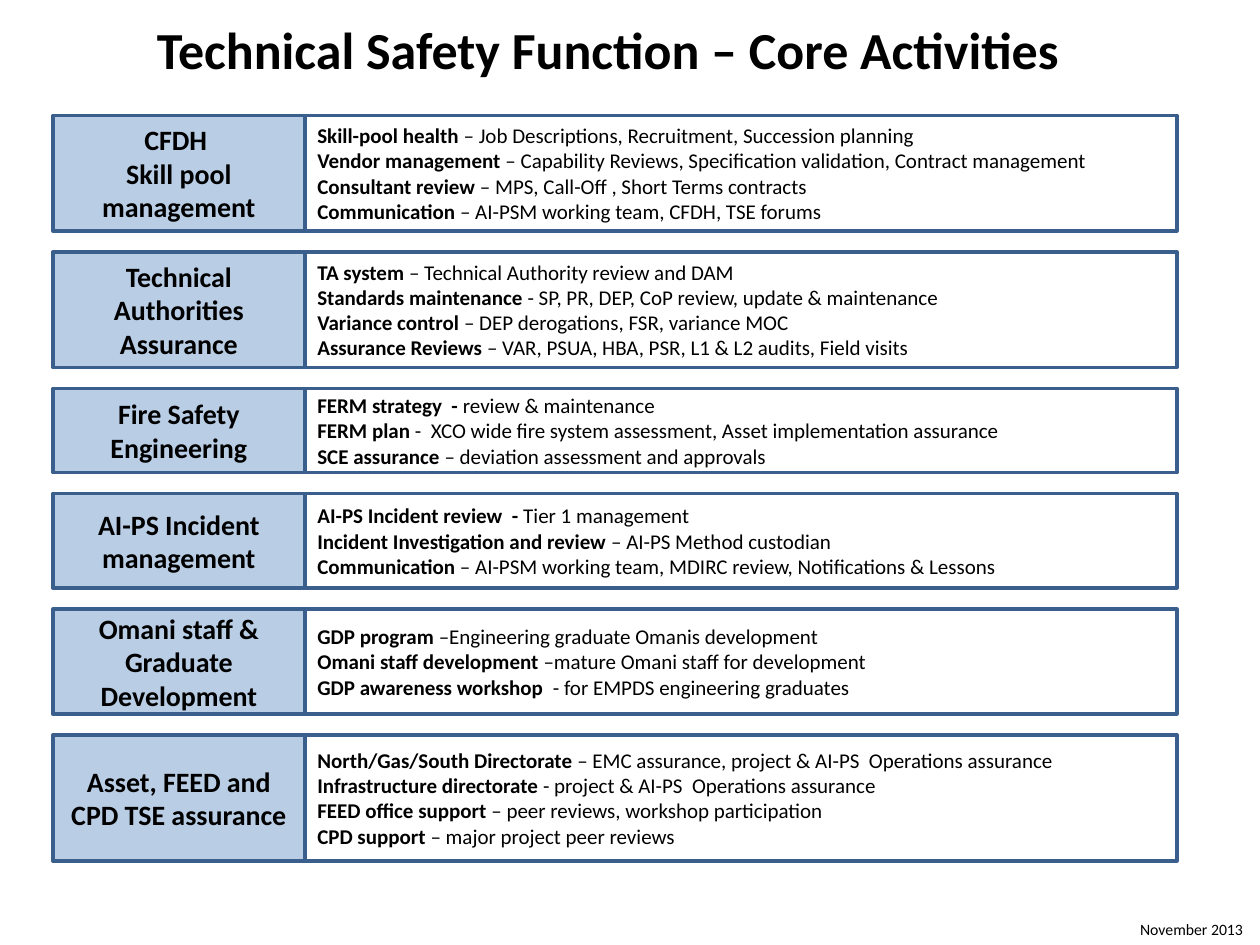
import pptx
import pptx.dml.color
import pptx.enum.shapes
import pptx.enum.text
import pptx.util

Inches = pptx.util.Inches
ALIGN = pptx.enum.text.PP_ALIGN
ANCHOR = pptx.enum.text.MSO_ANCHOR
AUTO_SIZE = pptx.enum.text.MSO_AUTO_SIZE

UNIT = Inches(1) / 12
GAP = 2
LEFT = Inches(0.42)
LABEL_WIDTH = Inches(2)
DETAIL_WIDTH = Inches(6.92)

ACTIVITIES = [
    (11, ["CFDH ", "Skill pool management"], [
        ("Skill-pool health ", "– Job Descriptions, Recruitment, Succession planning"),
        ("Vendor management ", "– Capability Reviews, Specification validation, Contract management"),
        ("Consultant review ", "– MPS, Call-Off , Short Terms contracts"),
        ("Communication ", "– AI-PSM working team, CFDH, TSE forums"),
    ]),
    (11, ["Technical Authorities", "Assurance"], [
        ("TA system ", "– Technical Authority review and DAM"),
        ("Standards maintenance ", "- SP, PR, DEP, CoP review, update & maintenance"),
        ("Variance control ", "– DEP derogations, FSR, variance MOC"),
        ("Assurance Reviews ", "– VAR, PSUA, HBA, PSR, L1 & L2 audits, Field visits"),
    ]),
    (8, ["Fire Safety Engineering"], [
        ("FERM strategy  - ", "review & maintenance"),
        ("FERM plan ", "-  XCO wide fire system assessment, Asset implementation assurance"),
        ("SCE assurance ", "– deviation assessment and approvals"),
    ]),
    (9, ["AI-PS Incident management"], [
        ("AI-PS Incident review  - ", "Tier 1 management"),
        ("Incident Investigation and review ", "– AI-PS Method custodian"),
        ("Communication", " – AI-PSM working team, MDIRC review, Notifications & Lessons"),
    ]),
    (10, ["Omani staff & Graduate Development"], [
        ("GDP program ", "–Engineering graduate Omanis development"),
        ("Omani staff development ", "–mature Omani staff for development"),
        ("GDP awareness workshop  ", "- for EMPDS engineering graduates"),
    ]),
    (12, ["Asset, FEED and CPD TSE assurance"], [
        ("North/Gas/South Directorate ", "– EMC assurance, project & AI-PS  Operations assurance"),
        ("Infrastructure directorate ", "- project & AI-PS  Operations assurance"),
        ("FEED office support ", "– peer reviews, workshop participation"),
        ("CPD support ", "– major project peer reviews"),
    ]),
]


def color(value):
    """Turn a hex string into a colour."""
    return pptx.dml.color.RGBColor.from_string(value)


def write_text(shape, lines, size, align=ALIGN.LEFT, anchor=ANCHOR.MIDDLE,
               wrap=True, auto_size=AUTO_SIZE.NONE, line_spacing=None):
    """Write one paragraph per line, each line a list of (text, bold) runs."""
    frame = shape.text_frame
    frame.word_wrap = wrap
    frame.auto_size = auto_size
    frame.vertical_anchor = anchor
    for index, line in enumerate(lines):
        paragraph = frame.add_paragraph() if index else frame.paragraphs[0]
        paragraph.alignment = align
        paragraph.line_spacing = line_spacing
        for text, bold in line:
            run = paragraph.add_run()
            run.text = text
            run.font.name = "Calibri"
            run.font.size = pptx.util.Pt(size)
            run.font.bold = bold
            run.font.color.rgb = color("000000")


def add_title(slide, text):
    """Place and fill the title."""
    title = slide.shapes.title
    title.left, title.top = Inches(0.33), Inches(0.17)
    title.width, title.height = Inches(9), Inches(0.53)
    write_text(title, [[(text, True)]], 29.7, align=ALIGN.CENTER, line_spacing=0.8)


def add_box(slide, left, top, width, height, fill):
    """Add a bordered rectangle."""
    box = slide.shapes.add_shape(pptx.enum.shapes.MSO_SHAPE.RECTANGLE,
                                 left, top, width, height)
    box.shadow.inherit = False
    box.fill.solid()
    box.fill.fore_color.rgb = color(fill)
    box.line.color.rgb = color("3A5F8C")
    box.line.width = pptx.util.Pt(2)
    return box


def add_activity(slide, top, height, labels, details):
    """Add a label box and the detail box beside it."""
    label_box = add_box(slide, LEFT, top, LABEL_WIDTH, height, "B9CDE5")
    write_text(label_box, [[(label, True)] for label in labels], 16, align=ALIGN.CENTER)
    detail_box = add_box(slide, LEFT + LABEL_WIDTH, top, DETAIL_WIDTH, height, "FFFFFF")
    write_text(detail_box, [[(topic, True), (scope, False)] for topic, scope in details], 12)


def add_date(slide, text):
    """Add the date in the bottom right corner."""
    box = slide.shapes.add_textbox(Inches(8.95), Inches(7.25), Inches(1.03), Inches(0.25))
    write_text(box, [[(text, False)]], 9, anchor=ANCHOR.TOP, wrap=False,
               auto_size=AUTO_SIZE.SHAPE_TO_FIT_TEXT)


def main():
    """Build and save the slide."""
    presentation = pptx.Presentation()
    presentation.slide_width, presentation.slide_height = Inches(10), Inches(7.5)
    slide = presentation.slides.add_slide(presentation.slide_layouts[5])
    add_title(slide, "Technical Safety Function – Core Activities")
    top = 11
    for height, labels, details in ACTIVITIES:
        add_activity(slide, round(top * UNIT), round(height * UNIT), labels, details)
        top += height + GAP
    add_date(slide, "November 2013")
    presentation.save("out.pptx")


if __name__ == "__main__":
    main()
